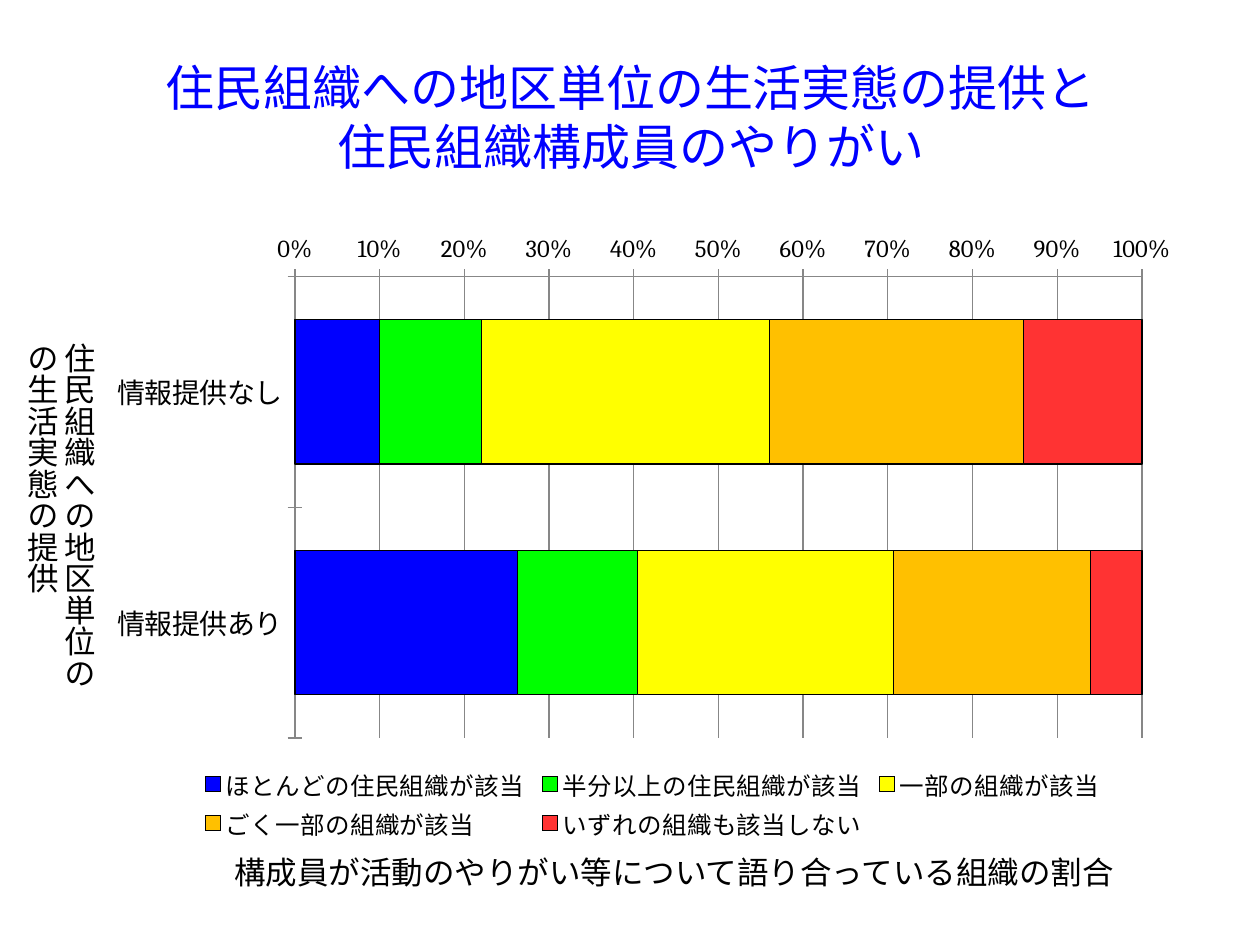
from dataclasses import dataclass

from lxml import etree
from pptx import Presentation
from pptx.chart.data import CategoryChartData
from pptx.dml.color import RGBColor
from pptx.enum.chart import XL_CHART_TYPE, XL_LEGEND_POSITION, XL_TICK_MARK
from pptx.enum.text import MSO_ANCHOR, PP_ALIGN
from pptx.oxml.ns import qn
from pptx.util import Inches, Pt

STACKED_BAR = XL_CHART_TYPE.BAR_STACKED_100
LEGEND_BOTTOM = XL_LEGEND_POSITION.BOTTOM
TICK_CROSS, TICK_NONE = XL_TICK_MARK.CROSS, XL_TICK_MARK.NONE
MIDDLE, TOP = MSO_ANCHOR.MIDDLE, MSO_ANCHOR.TOP
CENTER, LEFT = PP_ALIGN.CENTER, PP_ALIGN.LEFT

COLORS = {
    "blue": "0000FF",
    "green": "00FF00",
    "yellow": "FFFF00",
    "orange": "FFC000",
    "red": "FF3333",
    "black": "000000",
    "gray": "878787",
}


@dataclass
class Label:
    lines: list[str]
    box: tuple[float, float, float, float]
    size: int = 18
    color: str = "black"
    align: PP_ALIGN = LEFT
    anchor: MSO_ANCHOR = TOP
    wrap: bool = True
    vertical: bool = False


@dataclass
class Answer:
    name: str
    values: tuple[int, int]
    color: str


LABELS = [
    Label(["住民組織への地区単位の生活実態の提供と\v住民組織構成員のやりがい"],
          (0.27, 0.3, 9.47, 1.25), 28, "blue", CENTER, MIDDLE),
    Label(["住民組織への地区単位の", "の生活実態の提供"],
          (0.02, 2.62, 0.81, 2.74), wrap=False, vertical=True),
    Label(["構成員が活動のやりがい等について語り合っている組織の割合"],
          (1.76, 6.72, 7.21, 0.4)),
]
CATEGORIES = ["情報提供なし", "情報提供あり"]
ANSWERS = [
    Answer("ほとんどの住民組織が該当", (10, 26), "blue"),
    Answer("半分以上の住民組織が該当", (12, 14), "green"),
    Answer("一部の組織が該当", (34, 30), "yellow"),
    Answer("ごく一部の組織が該当", (30, 23), "orange"),
    Answer("いずれの組織も該当しない", (14, 6), "red"),
]


def rgb(name: str) -> RGBColor:
    return RGBColor.from_string(COLORS[name])


def set_font(font, size: int, color: str = "black", name: str = "Calibri") -> None:
    for attribute, value in {"size": Pt(size), "name": name, "bold": False}.items():
        setattr(font, attribute, value)
    font.color.rgb = rgb(color)


def add_label(slide, label: Label) -> None:
    shape = slide.shapes.add_textbox(*map(Inches, label.box))
    frame = shape.text_frame
    frame.text = "\n".join(label.lines)
    frame.word_wrap = label.wrap
    frame.vertical_anchor = label.anchor
    if label.vertical:
        frame._txBody.bodyPr.set("vert", "eaVert")
    for paragraph in frame.paragraphs:
        paragraph.alignment = label.align
        for run in paragraph.runs:
            set_font(run.font, label.size, label.color)


def make_layout(left: float, top: float, width: float, height: float, inner: bool):
    """Manual layout in fractions of the chart area."""
    layout = etree.Element(qn("c:layout"))
    manual = etree.SubElement(layout, qn("c:manualLayout"))
    settings = {"xMode": "edge", "yMode": "edge",
                "x": left, "y": top, "w": width, "h": height}
    if inner:
        settings = {"layoutTarget": "inner", **settings}
    for tag, value in settings.items():
        etree.SubElement(manual, qn(f"c:{tag}")).set("val", str(value))
    return layout


def format_axis(axis, size: int, font_name: str) -> None:
    settings = {"major_tick_mark": TICK_CROSS, "minor_tick_mark": TICK_NONE}
    for attribute, value in settings.items():
        setattr(axis, attribute, value)
    set_font(axis.tick_labels.font, size, name=font_name)
    format_line(axis.format.line, "gray")


def format_line(line, color: str) -> None:
    line.color.rgb = rgb(color)
    line.width = Pt(0.75)


def add_answer_chart(slide) -> None:
    data = CategoryChartData()
    data.categories = CATEGORIES
    for answer in ANSWERS:
        data.add_series(answer.name, answer.values)
    box = map(Inches, (0.77, 1.75, 8.73, 4.95))
    chart = slide.shapes.add_chart(STACKED_BAR, *box, data).chart
    chart.has_title = False
    set_font(chart.font, 12)

    # Bars
    plot = chart.plots[0]
    plot.gap_width, plot.overlap = 60, 100
    plot.vary_by_categories = False
    for series, answer in zip(plot.series, ANSWERS):
        series.format.fill.solid()
        series.format.fill.fore_color.rgb = rgb(answer.color)
        format_line(series.format.line, "black")

    # Axes
    format_axis(chart.category_axis, 16, "Calibri")
    chart.category_axis.reverse_order = True
    value_axis = chart.value_axis
    format_axis(value_axis, 14, "Cambria")
    scale = {"minimum_scale": 0, "maximum_scale": 1, "major_unit": 0.1,
             "has_major_gridlines": True}
    for attribute, value in scale.items():
        setattr(value_axis, attribute, value)
    value_axis.tick_labels.number_format = "0%"
    value_axis.tick_labels.number_format_is_linked = False
    format_line(value_axis.major_gridlines.format.line, "gray")

    # Legend
    chart.has_legend = True
    legend = chart.legend
    legend.position = LEGEND_BOTTOM
    legend.include_in_layout = False
    set_font(legend.font, 14)

    # Places of plot and legend
    plot_area = chart._chartSpace.chart.plotArea
    for old_layout in plot_area.findall(qn("c:layout")):
        plot_area.remove(old_layout)
    plot_area.insert(0, make_layout(0.18, 0.09, 0.77, 0.74, True))
    legend_element = legend._element
    for old_layout in legend_element.findall(qn("c:layout")):
        legend_element.remove(old_layout)
    legend_element.find(qn("c:legendPos")).addnext(
        make_layout(0.09, 0.87, 0.83, 0.13, False))


def main() -> None:
    presentation = Presentation()
    presentation.slide_width = Inches(10)
    presentation.slide_height = Inches(7.5)
    slide = presentation.slides.add_slide(presentation.slide_layouts[6])
    title, *captions = LABELS
    add_label(slide, title)
    add_answer_chart(slide)
    for caption in captions:
        add_label(slide, caption)
    presentation.save("out.pptx")


if __name__ == "__main__":
    main()
